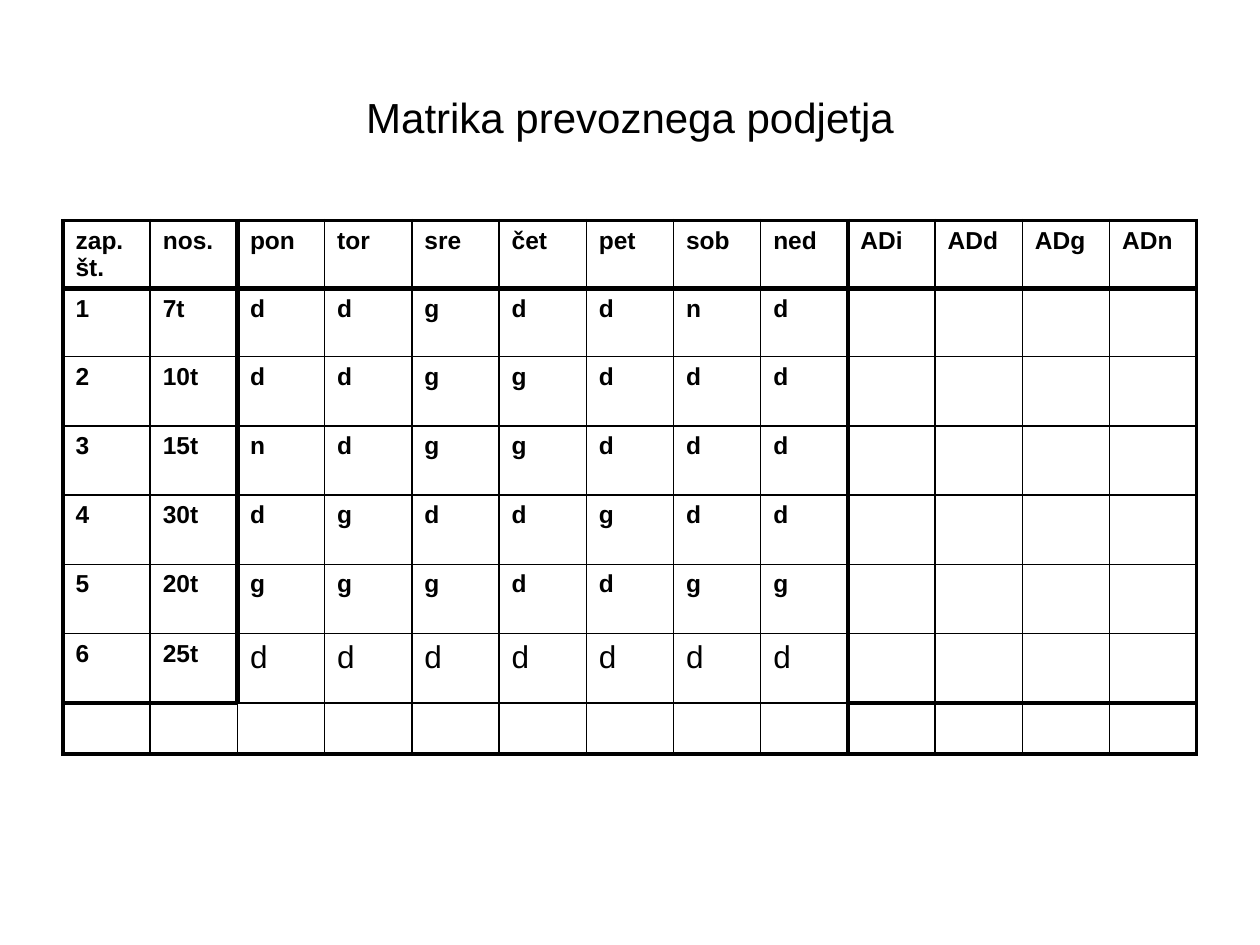
from typing import NamedTuple

from lxml import etree
from pptx import Presentation
from pptx import util as u
from pptx.dml.color import RGBColor
from pptx.enum import text
from pptx.oxml.ns import qn

COLORS = {"ink": "000000", "paper": "FFFFFF"}
FONT = "Arial"
WIDTH, HEIGHT = u.Inches(10), u.Inches(7.5)
THIN, FRAME, HEAVY = 1, 2.25, 3
ROW_HEIGHTS = [0.54, 0.54] + [0.55] * 5 + [0.39]
HEADERS = ["zap. št.", "nos.", "pon", "tor", "sre", "čet", "pet", "sob",
           "ned", "ADi", "ADd", "ADg", "ADn"]
N_ROWS, N_COLS = len(ROW_HEIGHTS), len(HEADERS)
DAYS_START, TOTALS_START = 2, 9


class Box(NamedTuple):
    x: float
    y: float
    w: float
    h: float

    def lengths(self) -> tuple[int, int, int, int]:
        return (round(self.x * WIDTH), round(self.y * HEIGHT),
                round(self.w * WIDTH), round(self.h * HEIGHT))


class Vehicle(NamedTuple):
    capacity: str
    days: str
    size: float = 14
    bold: bool = True


TITLE_BOX = Box(0.05, 0.04, 0.9, 1 / 6)
TABLE_BOX = Box(0.05, 7 / 30, 0.9, sum(ROW_HEIGHTS) / 7.5)
VEHICLES = [
    Vehicle("7t", "ddgddnd"),
    Vehicle("10t", "ddggddd"),
    Vehicle("15t", "ndggddd"),
    Vehicle("30t", "dgddgdd"),
    Vehicle("20t", "gggddgg"),
    Vehicle("25t", "ddddddd", size=18, bold=False),
]


def write(tf, content: str, size: float = 14, bold: bool = False,
          align=text.PP_ALIGN.LEFT, space_before: int = 0) -> None:
    p = tf.paragraphs[0]
    p.alignment = align
    if space_before:
        spacing = etree.SubElement(p._p.get_or_add_pPr(), qn("a:spcBef"))
        etree.SubElement(spacing, qn("a:spcPct"), val=str(space_before * 1000))
    r = p.add_run()
    r.text = content
    r.font.name = FONT
    r.font.size = u.Pt(size)
    r.font.bold = bold
    r.font.color.rgb = RGBColor.from_string(COLORS["ink"])


def vertical_weight(row: int, edge: int) -> float:
    if edge in (0, N_COLS):
        return FRAME
    if edge == TOTALS_START or (edge == DAYS_START and row < N_ROWS - 1):
        return HEAVY
    return THIN


def horizontal_weight(edge: int, col: int) -> float:
    if edge in (0, N_ROWS):
        return FRAME
    is_day = DAYS_START <= col < TOTALS_START
    if edge == 1 or (edge == N_ROWS - 1 and not is_day):
        return HEAVY
    return THIN


def format_cell(cell, row: int, col: int) -> None:
    weights = {
        "a:lnL": vertical_weight(row, col),
        "a:lnR": vertical_weight(row, col + 1),
        "a:lnT": horizontal_weight(row, col),
        "a:lnB": horizontal_weight(row + 1, col),
    }
    tcPr = cell._tc.get_or_add_tcPr()
    for tag, weight in weights.items():
        ln = etree.SubElement(tcPr, qn(tag), w=str(u.Pt(weight)))
        fill = etree.SubElement(ln, qn("a:solidFill"))
        etree.SubElement(fill, qn("a:srgbClr"), val=COLORS["ink"])
    cell.fill.background()


def add_matrix(slide) -> None:
    table = slide.shapes.add_table(N_ROWS, N_COLS, *TABLE_BOX.lengths()).table
    table.first_row = table.horz_banding = False
    for column in table.columns:
        column.width = round(TABLE_BOX.w * WIDTH / N_COLS)
    for row, height in enumerate(ROW_HEIGHTS):
        table.rows[row].height = u.Inches(height)
        for col in range(N_COLS):
            format_cell(table.cell(row, col), row, col)
    for col, header in enumerate(HEADERS):
        write(table.cell(0, col).text_frame, header, bold=True, space_before=20)
    for row, vehicle in enumerate(VEHICLES, start=1):
        for col, label in enumerate((str(row), vehicle.capacity)):
            write(table.cell(row, col).text_frame, label, bold=True,
                  space_before=20)
        for col, day in enumerate(vehicle.days, start=DAYS_START):
            write(table.cell(row, col).text_frame, day, size=vehicle.size,
                  bold=vehicle.bold, space_before=20 if vehicle.bold else 0)


def add_title(slide) -> None:
    sp = slide.shapes.title
    sp.left, sp.top, sp.width, sp.height = TITLE_BOX.lengths()
    tf = sp.text_frame
    tf.word_wrap = True
    tf.vertical_anchor = text.MSO_ANCHOR.MIDDLE
    write(tf, "Matrika prevoznega podjetja", size=24,
          align=text.PP_ALIGN.CENTER)


def main() -> None:
    prs = Presentation()
    prs.slide_width, prs.slide_height = WIDTH, HEIGHT
    slide = prs.slides.add_slide(prs.slide_layouts[5])
    slide.background.fill.solid()
    slide.background.fill.fore_color.rgb = RGBColor.from_string(COLORS["paper"])
    add_title(slide)
    add_matrix(slide)
    prs.save("out.pptx")


if __name__ == "__main__":
    main()
